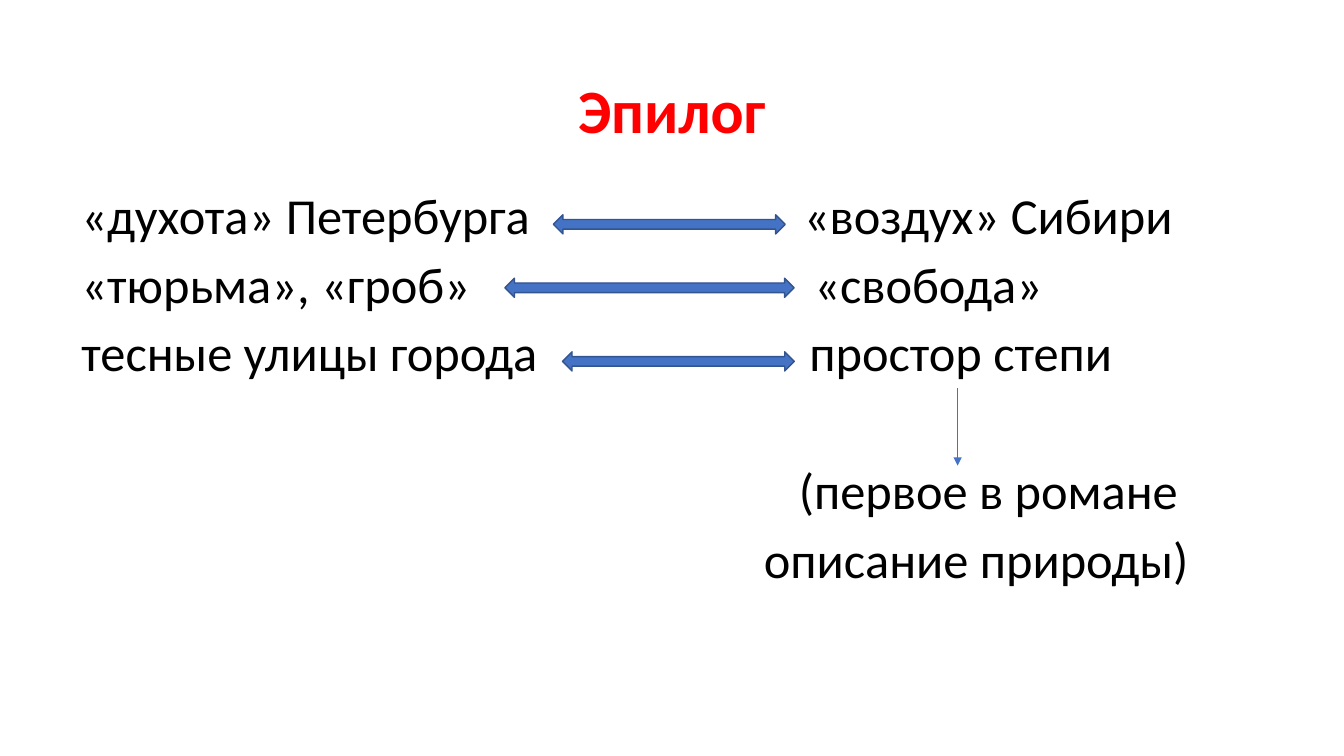
from pptx import Presentation
from pptx.dml.color import RGBColor
from pptx.enum import shapes, text
from pptx.oxml.ns import qn
from pptx.util import Pt
from lxml import etree

RED = RGBColor(0xFF, 0x00, 0x00)
BLACK = RGBColor(0x00, 0x00, 0x00)
BLUE = RGBColor(0x44, 0x72, 0xC4)
DARK_BLUE = RGBColor(0x32, 0x54, 0x91)

CONTRASTS = [
    ("«духота» Петербурга", "«воздух» Сибири", 516),
    ("«тюрьма», «гроб»", "«свобода»", 523.5),
    ("тесные улицы города", "простор степи", 520),
]
REMARK = [("(первое в романе", 512.5, 59.5), ("описание природы)", 487.5, 10)]
DOUBLE_ARROWS = [(395.3, 153.4, 165.6), (360.7, 198.7, 206.6), (401.8, 251.3, 165.6)]


def style_font(paragraph, size, color, bold=False):
    font = paragraph.font
    font.name, font.size, font.bold = "Calibri", Pt(size), bold
    font.color.rgb = color


def set_title(slide, wording):
    title = slide.shapes.title
    title.left, title.top, title.width, title.height = Pt(66), Pt(28.8), Pt(828), Pt(104.4)
    frame = title.text_frame
    frame.text = wording
    frame.auto_size = text.MSO_AUTO_SIZE.NONE
    frame.vertical_anchor = text.MSO_ANCHOR.MIDDLE
    paragraph = frame.paragraphs[0]
    paragraph.alignment = text.PP_ALIGN.CENTER
    paragraph.line_spacing = 0.9
    style_font(paragraph, 44, RED, bold=True)


def add_line_of_text(frame, wording, space_before=10, tab=None, indent=None):
    paragraph = frame.paragraphs[0] if not frame.text else frame.add_paragraph()
    paragraph.text = wording
    paragraph.line_spacing = 0.9
    paragraph.space_before = Pt(space_before)
    properties = paragraph._p.get_or_add_pPr()
    if tab:
        tabs = etree.SubElement(properties, qn("a:tabLst"))
        etree.SubElement(tabs, qn("a:tab"), pos=str(Pt(tab)), algn="l")
    if indent:
        properties.set("marL", str(Pt(indent)))
        properties.set("indent", "0")
    style_font(paragraph, 36, BLACK)


def add_body(slide):
    body = slide.shapes.add_textbox(Pt(51.1), Pt(133.2), Pt(828), Pt(342.7))
    frame = body.text_frame
    frame.word_wrap = True
    for left, right, tab in CONTRASTS:
        add_line_of_text(frame, f"{left}\t{right}", tab=tab)
    for wording, indent, space_before in REMARK:
        add_line_of_text(frame, wording, space_before, indent=indent)


def add_down_arrow(slide, x, top, bottom):
    connector = slide.shapes.add_connector(
        shapes.MSO_CONNECTOR.STRAIGHT, Pt(x), Pt(top), Pt(x), Pt(bottom))
    connector.line.color.rgb = BLUE
    connector.line.width = Pt(0.5)
    etree.SubElement(connector.line._get_or_add_ln(), qn("a:tailEnd"), type="triangle")
    etree.SubElement(connector._element.spPr, qn("a:effectLst"))


def add_double_arrow(slide, left, top, width):
    arrow = slide.shapes.add_shape(
        shapes.MSO_SHAPE.LEFT_RIGHT_ARROW, Pt(left), Pt(top), Pt(width), Pt(13.7))
    arrow.shadow.inherit = False
    arrow.fill.solid()
    arrow.fill.fore_color.rgb = BLUE
    arrow.line.color.rgb = DARK_BLUE
    arrow.line.width = Pt(1)


def main():
    presentation = Presentation()
    presentation.slide_width, presentation.slide_height = Pt(960), Pt(540)
    slide = presentation.slides.add_slide(presentation.slide_layouts[5])
    set_title(slide, "Эпилог")
    add_body(slide)
    add_down_arrow(slide, 684, 277.2, 332.6)
    for left, top, width in DOUBLE_ARROWS:
        add_double_arrow(slide, left, top, width)
    presentation.save("out.pptx")


if __name__ == "__main__":
    main()
